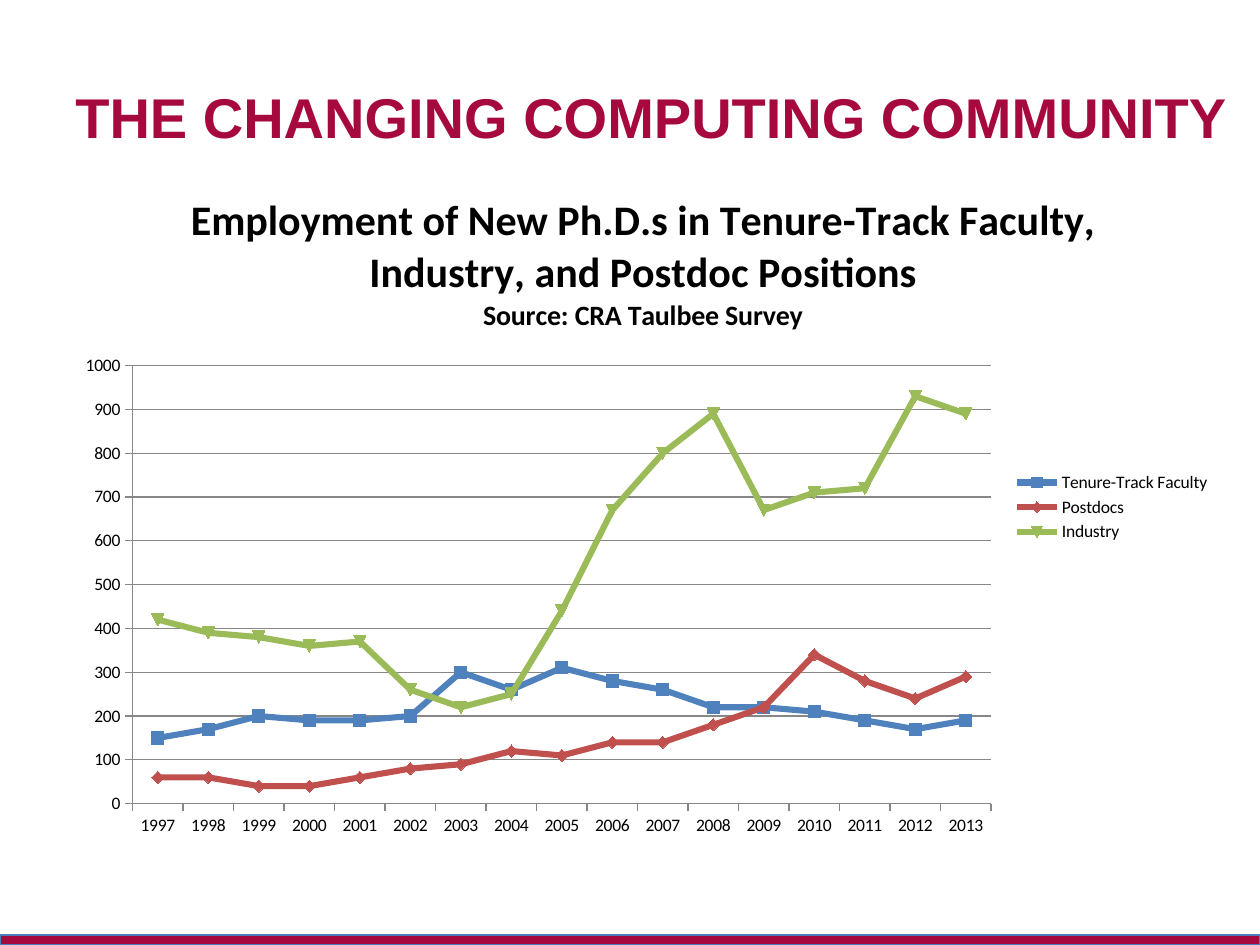
from dataclasses import dataclass

from lxml.etree import SubElement
from pptx import Presentation
from pptx.chart.data import CategoryChartData
from pptx.dml.color import RGBColor
from pptx.enum.chart import XL_CHART_TYPE as ChartType
from pptx.enum.chart import XL_LEGEND_POSITION as LegendPos
from pptx.enum.chart import XL_TICK_MARK as Tick
from pptx.enum.shapes import MSO_SHAPE as Shape
from pptx.enum.text import MSO_ANCHOR as Anchor
from pptx.oxml.ns import qn
from pptx.util import Cm, Pt


@dataclass(frozen=True)
class Theme:
    crimson: str = "A6093D"
    bar_line: str = "4B7EBC"
    black: str = "000000"
    grid: str = "878787"
    heading_font: str = "Arial"
    chart_font: str = "Calibri"
    heading: float = 32
    chart_title: float = 24
    source: float = 16
    label: float = 10
    series_line: float = 3.5


@dataclass(frozen=True)
class Series:
    name: str
    color: str
    values: tuple[int, ...]


THEME = Theme()
YEARS = range(1997, 2014)
SERIES = (
    Series("Tenure-Track Faculty", "4F81BD",
           (150, 170, 200, 190, 190, 200, 300, 260, 310, 280, 260, 220, 220,
            210, 190, 170, 190)),
    Series("Postdocs", "C0504D",
           (60, 60, 40, 40, 60, 80, 90, 120, 110, 140, 140, 180, 220, 340,
            280, 240, 290)),
    Series("Industry", "9BBB59",
           (420, 390, 380, 360, 370, 260, 220, 250, 440, 670, 800, 890, 670,
            710, 720, 930, 890)),
)
PLOT_AREA = {"x": 0.06, "y": 0.29, "w": 0.74, "h": 0.65}


def rgb(color: str) -> RGBColor:
    return RGBColor.from_string(color)


def set_font(font, *, size: float, face: str, color: str, bold: bool = False) -> None:
    font.size, font.name, font.bold = Pt(size), face, bold
    font.color.rgb = rgb(color)


def add_run(p, text: str, **fmt) -> None:
    r = p.add_run()
    r.text = text
    set_font(r.font, **fmt)


def add_heading(s) -> None:
    tf = s.shapes.add_textbox(Cm(1.27), Cm(0.76), Cm(24.13), Cm(3.18)).text_frame
    tf.word_wrap = True
    tf.vertical_anchor = Anchor.MIDDLE
    add_run(tf.paragraphs[0], "THE CHANGING COMPUTING COMMUNITY",
            size=THEME.heading, face=THEME.heading_font,
            color=THEME.crimson, bold=True)


def add_footer_bar(s) -> None:
    bar = s.shapes.add_shape(Shape.RECTANGLE, 0, Cm(18.85), Cm(25.4), Cm(0.2))
    bar.shadow.inherit = False
    bar.fill.solid()
    bar.fill.fore_color.rgb = rgb(THEME.crimson)
    bar.line.color.rgb = rgb(THEME.bar_line)
    bar.line.width = Pt(0.75)


def set_plot_layout(chart) -> None:
    """Fix the inner plot area as fractions of the chart."""
    plot_area = chart._chartSpace.chart.plotArea
    for old in plot_area.findall(qn("c:layout")):
        plot_area.remove(old)
    layout = SubElement(plot_area, qn("c:layout"))
    plot_area.insert(0, layout)
    manual = SubElement(layout, qn("c:manualLayout"))
    settings = {"layoutTarget": "inner", "xMode": "edge", "yMode": "edge", **PLOT_AREA}
    for tag, value in settings.items():
        SubElement(manual, qn(f"c:{tag}")).set("val", str(value))


def style_axis(axis) -> None:
    axis.major_tick_mark, axis.minor_tick_mark = Tick.OUTSIDE, Tick.NONE
    axis.format.line.color.rgb = rgb(THEME.grid)
    set_font(axis.tick_labels.font, size=THEME.label, face=THEME.chart_font,
             color=THEME.black)


def add_chart_title(chart) -> None:
    tf = chart.chart_title.text_frame
    fmt = dict(face=THEME.chart_font, color=THEME.black, bold=True)
    add_run(tf.paragraphs[0],
            "Employment of New Ph.D.s in Tenure-Track Faculty, "
            "Industry, and Postdoc Positions", size=THEME.chart_title, **fmt)
    add_run(tf.add_paragraph(), "Source: CRA Taulbee Survey",
            size=THEME.source, **fmt)
    chart.chart_title.include_in_layout = False


def add_employment_chart(s) -> None:
    data = CategoryChartData()
    data.categories = [str(year) for year in YEARS]
    for item in SERIES:
        data.add_series(item.name, item.values)
    chart = s.shapes.add_chart(ChartType.LINE_MARKERS, Cm(1.27), Cm(3.43),
                               Cm(23.39), Cm(13.59), data).chart
    set_font(chart.font, size=THEME.label, face=THEME.chart_font, color=THEME.black)
    add_chart_title(chart)
    set_plot_layout(chart)

    chart.has_legend = True
    chart.legend.position = LegendPos.RIGHT
    chart.legend.include_in_layout = False
    set_font(chart.legend.font, size=THEME.label, face=THEME.chart_font,
             color=THEME.black)

    style_axis(chart.category_axis)
    value_axis = chart.value_axis
    style_axis(value_axis)
    value_axis.minimum_scale, value_axis.maximum_scale = 0, 1000
    value_axis.major_unit = 100
    value_axis.has_major_gridlines = True
    value_axis.major_gridlines.format.line.color.rgb = rgb(THEME.grid)

    plot = chart.plots[0]
    plot.vary_by_categories = False
    for line, item in zip(plot.series, SERIES):
        line.smooth = False
        line.format.line.width = Pt(THEME.series_line)
        line.format.line.color.rgb = rgb(item.color)
        line.marker.size = 7
        line.marker.format.fill.solid()
        line.marker.format.fill.fore_color.rgb = rgb(item.color)
        line.marker.format.line.color.rgb = rgb(item.color)


def main() -> None:
    prs = Presentation()
    prs.slide_width, prs.slide_height = Cm(25.4), Cm(19.05)
    s = prs.slides.add_slide(prs.slide_layouts[6])
    add_footer_bar(s)
    add_heading(s)
    add_employment_chart(s)
    prs.save("out.pptx")


if __name__ == "__main__":
    main()
